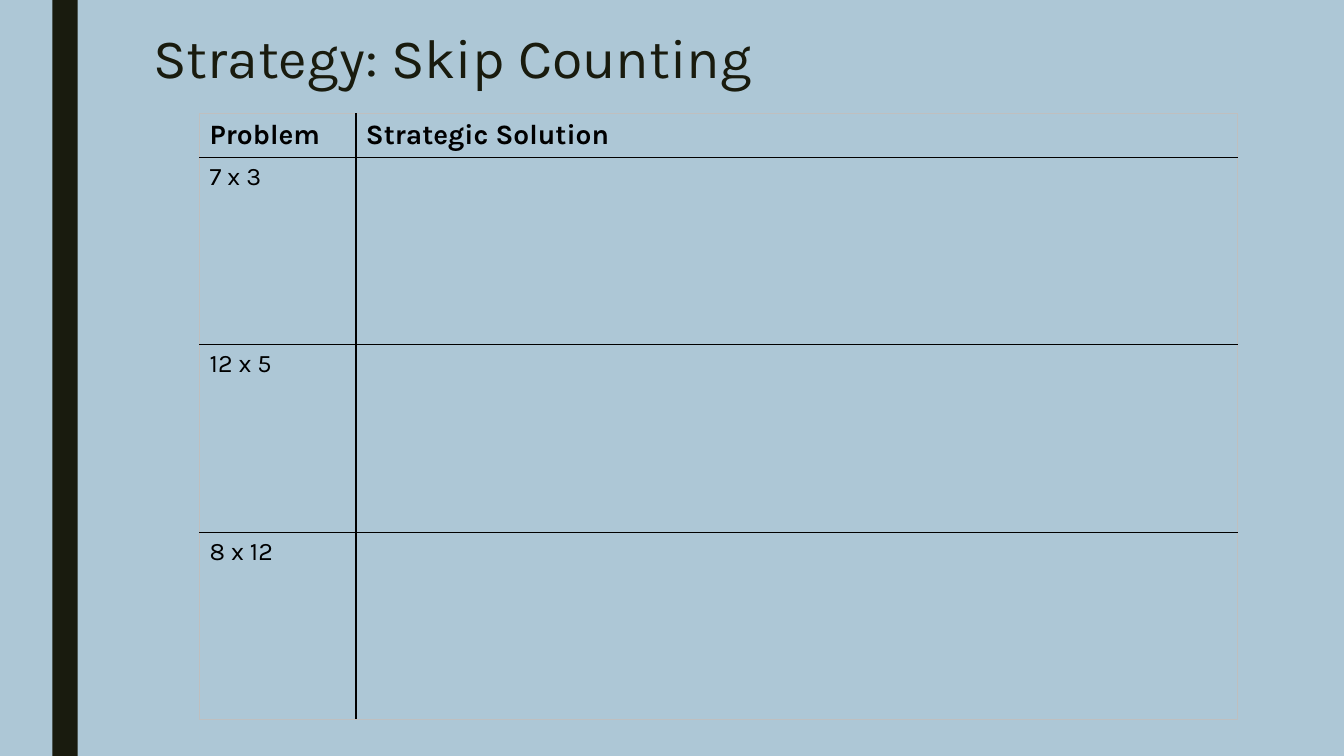
from lxml import etree
from pptx import Presentation
from pptx.dml.color import RGBColor
from pptx.enum.shapes import MSO_SHAPE
from pptx.enum.text import MSO_ANCHOR, PP_ALIGN
from pptx.oxml.ns import qn
from pptx.util import Inches, Pt

RECT = MSO_SHAPE.RECTANGLE
MIDDLE = MSO_ANCHOR.MIDDLE
LEFT = PP_ALIGN.LEFT
TITLE_ONLY = 5

FONT = "Karla"
SKY, DARK, BLACK, GREY = "ADC7D6", "191B0E", "000000", "BFBFBF"
ROWS = [
    ("Problem", "Strategic Solution"),
    ("7 x 3", ""),
    ("12 x 5", ""),
    ("8 x 12", ""),
]
COL_WIDTHS = [1.55, 8.74]
ROW_HEIGHTS = [0.43] + [1.86] * 3


def rgb(value):
    return RGBColor.from_string(value)


def write(tf, text, color, **formats):
    p = tf.paragraphs[0]
    p.alignment = LEFT
    r = p.add_run()
    r.text = text
    r.font.color.rgb = rgb(color)
    for name, value in {"name": FONT, **formats}.items():
        setattr(r.font, name, value)
    return p


def add_bar(s):
    bar = s.shapes.add_shape(RECT, Inches(0.52), 0, Inches(0.25), Inches(7.5))
    bar.shadow.inherit = False
    bar.fill.solid()
    bar.fill.fore_color.rgb = rgb(DARK)
    bar.line.fill.background()


def set_title(s, text):
    sp = s.shapes.title
    place = {"left": 1.42, "top": 0.23, "width": 10.5, "height": 0.75}
    for name, value in place.items():
        setattr(sp, name, Inches(value))
    tf = sp.text_frame
    tf.word_wrap = True
    tf.vertical_anchor = MIDDLE
    p = write(tf, text, DARK, size=Pt(39.6))
    p.line_spacing = 0.89


def set_border(cell, side, color):
    tc_pr = cell._tc.get_or_add_tcPr()
    ln = etree.SubElement(tc_pr, qn(f"a:ln{side}"), w=str(Pt(1)))
    fill = etree.SubElement(ln, qn("a:solidFill"))
    etree.SubElement(fill, qn("a:srgbClr"), val=color)


def add_problem_table(s):
    n_rows, n_cols = len(ROWS), len(COL_WIDTHS)
    frame = s.shapes.add_table(
        n_rows, n_cols, Inches(1.98), Inches(1.13),
        Inches(sum(COL_WIDTHS)), Inches(sum(ROW_HEIGHTS)))
    table = frame.table
    table.horz_banding = False
    for column, width in zip(table.columns, COL_WIDTHS):
        column.width = Inches(width)
    for i, height in enumerate(ROW_HEIGHTS):
        table.rows[i].height = Inches(height)
        for j, text in enumerate(ROWS[i]):
            cell = table.cell(i, j)
            outer = {"L": j == 0, "R": j == n_cols - 1,
                     "T": i == 0, "B": i == n_rows - 1}
            for side, is_outer in outer.items():
                set_border(cell, side, GREY if is_outer else BLACK)
            cell.fill.background()
            if text:
                header = i == 0
                write(cell.text_frame, text, BLACK,
                      size=Pt(20 if header else 18), bold=header)


def main():
    prs = Presentation()
    prs.slide_width, prs.slide_height = Inches(13.33), Inches(7.5)
    s = prs.slides.add_slide(prs.slide_layouts[TITLE_ONLY])
    s.background.fill.solid()
    s.background.fill.fore_color.rgb = rgb(SKY)
    add_bar(s)
    set_title(s, "Strategy: Skip Counting")
    add_problem_table(s)
    prs.save("out.pptx")


if __name__ == "__main__":
    main()
